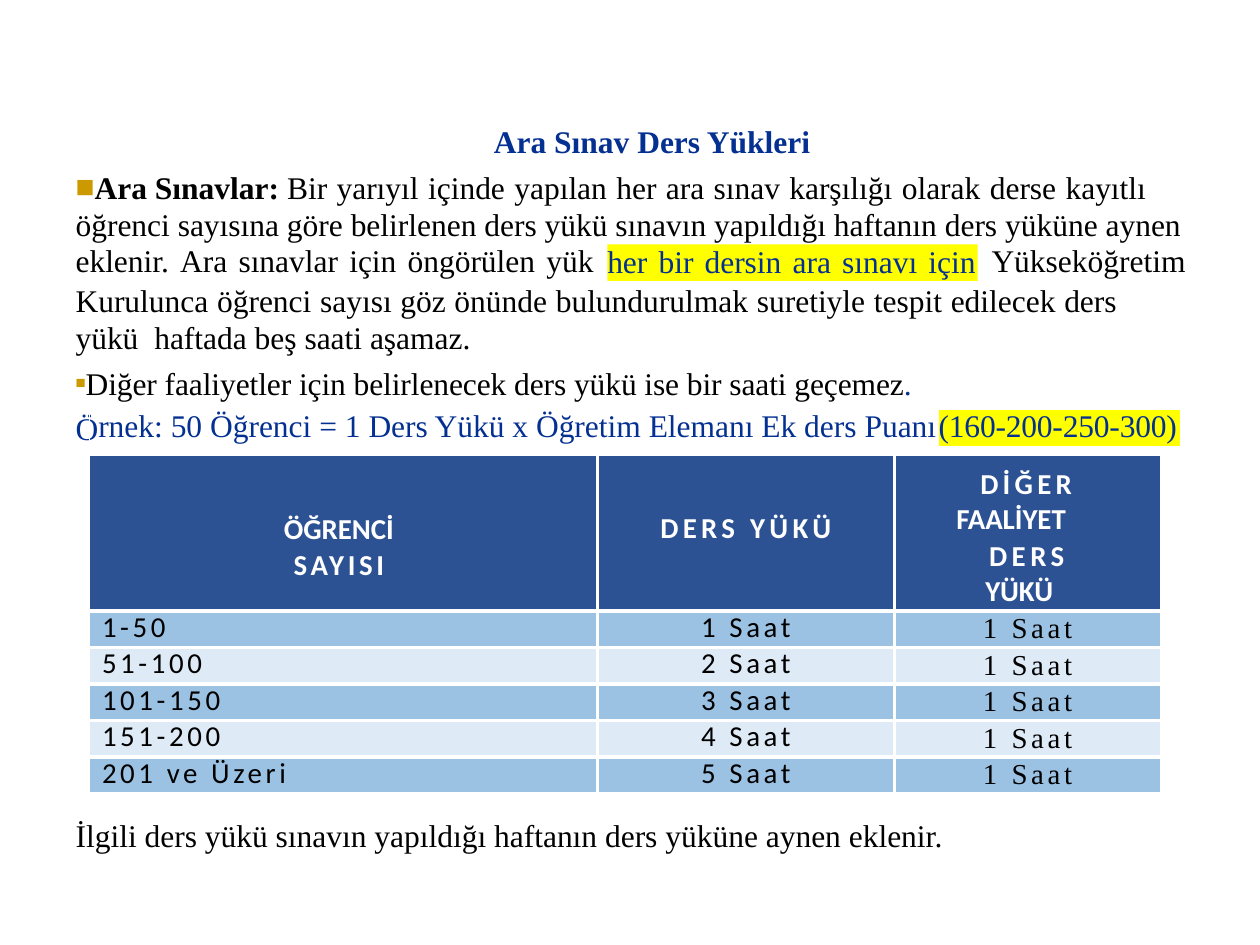
from typing import NamedTuple

from lxml.etree import SubElement
from pptx import Presentation
from pptx.dml.color import RGBColor as Rgb
from pptx.enum.shapes import MSO_SHAPE as Kind
from pptx.enum.text import PP_ALIGN as Align
from pptx.oxml.ns import qn
from pptx.util import Inches, Pt

HUES = {"ink": "000000", "navy": "043092", "gold": "CC9900", "mark": "FFFF00",
        "head": "2D5294", "dark": "9CC2E3", "pale": "DEEAF6", "white": "FFFFFF"}
SERIF, SANS = "Times New Roman", "Calibri"
COLS = (4.03, 2.36, 0.35, 1.77, 0.15)
ROWS = (0.33, 1.27, 0.29, 0.29, 0.29, 0.29, 0.28)


class Box(NamedTuple):
    left: float
    top: float
    width: float
    height: float
    inset: float = 0


class Load(NamedTuple):
    count: str
    hours: str
    other: str = "1 Saat"


LOADS = (Load("1-50", "1 Saat"), Load("51-100", "2 Saat"), Load("101-150", "3 Saat"),
         Load("151-200", "4 Saat"), Load("201 ve Üzeri", "5 Saat"))


def color(name: str) -> Rgb:
    return Rgb.from_string(HUES[name])


def write(par, text: str, size: float = 18, font: str = SERIF, hue: str = "ink",
          bold: bool = False, spc: float = 0, gap: float = 0) -> None:
    """Add text; spc widens every letter, gap widens only the word spaces."""
    parts = text.replace(" ", "\n \n").split("\n") if gap else [text]
    for part in filter(None, parts):
        run = par.add_run()
        run.text = part
        run.font.size, run.font.name, run.font.bold = Pt(size), font, bold
        run.font.color.rgb = color(hue)
        extra = gap if gap and part == " " else spc
        run._r.get_or_add_rPr().set("spc", str(round(extra * 100)))


def bullet(par, scale: int) -> None:
    props = par._p.get_or_add_pPr()
    tint = SubElement(props, qn("a:buClr"))
    SubElement(tint, qn("a:srgbClr"), val=HUES["gold"])
    SubElement(props, qn("a:buSzPct"), val=str(scale * 1000))
    SubElement(props, qn("a:buFont"), typeface=SERIF)
    SubElement(props, qn("a:buChar"), char="■")


def layout(par, left: float = 0, right: float = 0, first: float = 0, line=None,
           before: float = 0, align=Align.LEFT):
    """Set indents in inches, and line and space before in points."""
    props = par._p.get_or_add_pPr()
    for name, size in (("marL", left), ("marR", right), ("indent", first)):
        props.set(name, str(Inches(size)))
    par.alignment = align
    par.space_before = Pt(before)
    if line:
        par.line_spacing = line
    return par


def trim(owner, top: float = 0) -> None:
    """Clear the margins of a text frame or a cell, save the one at the top."""
    owner.margin_left = owner.margin_right = owner.margin_bottom = 0
    owner.margin_top = Inches(top)


def add_box(slide, box: Box):
    frame = slide.shapes.add_textbox(*map(Inches, box[:4])).text_frame
    frame.word_wrap = True
    trim(frame, box.inset)
    return frame


def add_intro(slide) -> None:
    frame = add_box(slide, Box(0.59, 0.91, 8.82, 1.02, 0.06))
    title = layout(frame.paragraphs[0], left=3.33)
    write(title, "Ara Sınav Ders Yükleri", hue="navy", bold=True)
    body = frame.add_paragraph()
    bullet(body, 100)
    layout(body, left=0.01, line=Pt(21.4), before=4.5)
    write(body, "Ara Sınavlar: ", bold=True)
    write(body, "Bir yarıyıl içinde yapılan her ara sınav karşılığı olarak "
          "derse kayıtlı ", gap=0.8)
    write(body, "öğrenci sayısına göre belirlenen ders yükü sınavın yapıldığı "
          "haftanın ders yüküne aynen")


def add_mark(slide) -> None:
    rect = slide.shapes.add_shape(Kind.RECTANGLE, *map(Inches, (4.82, 1.94, 2.94, 0.29)))
    rect.shadow.inherit = False
    rect.fill.solid()
    rect.fill.fore_color.rgb = color("mark")
    rect.line.fill.background()
    frame = rect.text_frame
    frame.word_wrap = True
    trim(frame)
    write(layout(frame.paragraphs[0], line=Pt(19.9)), "her bir dersin ara sınavı için",
          hue="navy", gap=1.8)


def add_rules(slide) -> None:
    for box, text in (
            (Box(0.59, 1.9, 4.2, 0.33, 0.01), "eklenir. Ara sınavlar için öngörülen yük"),
            (Box(7.86, 1.9, 1.56, 0.33, 0.01), "Yükseköğretim")):
        par = add_box(slide, box).paragraphs[0]
        write(layout(par, left=0.01), text, gap=1.8)

    frame = add_box(slide, Box(0.59, 2.2, 8.83, 1.36, 0.03))
    limit = layout(frame.paragraphs[0], left=0.01, right=0.1, line=Pt(21.4))
    write(limit, "Kurulunca öğrenci sayısı göz önünde bulundurulmak suretiyle "
          "tespit edilecek ders ", gap=0.4)
    write(limit, "yükü ", gap=4.5)
    write(limit, "haftada beş saati aşamaz.")
    other = frame.add_paragraph()
    bullet(other, 53)
    layout(other, left=0.01, line=Pt(25.7), before=0.6)
    write(other, "Diğer faaliyetler için belirlenecek ders yükü ise bir saati geçemez",
          spc=-0.05)
    write(other, ".", hue="navy")
    other.add_line_break()
    write(other, "Ö", hue="navy")


def edge(cell, sides: dict[str, float]) -> None:
    """Draw white borders; must run before the cell's fill is set."""
    props = cell._tc.get_or_add_tcPr()
    for side in ("L", "R", "T", "B"):
        if side in sides:
            line = SubElement(props, qn(f"a:ln{side}"), w=str(Pt(sides[side])))
            fill = SubElement(line, qn("a:solidFill"))
            SubElement(fill, qn("a:srgbClr"), val=HUES["white"])


def paint(cell, hue: str) -> None:
    cell.fill.solid()
    cell.fill.fore_color.rgb = color(hue)


def sides_at(row: int, col: int) -> dict[str, float]:
    if row == 0:
        return {"B": 6}
    sides = {"T": 6 if row == 1 else 2.25}
    if row < len(ROWS) - 1:
        sides["B"] = 2.25
    if 0 < col < 4:
        sides["L"] = 2.25
    if col < 2:
        sides["R"] = 2.25
    return sides


def add_grid(slide):
    shape = slide.shapes.add_table(len(ROWS), len(COLS), Inches(0.71), Inches(3.25),
                                   Inches(sum(COLS)), Inches(sum(ROWS)))
    table = shape.table
    table.first_row = table.horz_banding = False
    for col, width in zip(table.columns, COLS):
        col.width = Inches(width)
    for i, height in enumerate(ROWS):
        table.rows[i].height = Inches(height)
        for j in range(len(COLS)):
            cell = table.cell(i, j)
            trim(cell)
            cell.text_frame.paragraphs[0].font.size = Pt(10)
            edge(cell, sides_at(i, j))
            if i == 0 or j == 4:
                cell.fill.background()
            else:
                paint(cell, "head" if i == 1 else "pale" if i % 2 else "dark")
        if i:
            table.cell(i, 2).merge(table.cell(i, 3))
    table.cell(0, 0).merge(table.cell(0, 2))
    table.cell(0, 3).merge(table.cell(0, 4))
    table.cell(1, 4).merge(table.cell(len(ROWS) - 1, 4))
    return table


def fill_head(table) -> None:
    look = dict(size=16.5, font=SANS, hue="white", bold=True)
    count, hours, other = (table.cell(1, j) for j in range(3))
    count.margin_top = hours.margin_top = Inches(0.48)
    other.margin_top = Inches(0.12)
    par = layout(count.text_frame.paragraphs[0], left=1.43, right=1.5, line=1.02,
                 align=Align.CENTER)
    write(par, "ÖĞRENCİ ", **look)
    write(par, "SAYISI", spc=2.1, **look)
    par = layout(hours.text_frame.paragraphs[0], align=Align.CENTER)
    write(par, "DERS YÜKÜ", spc=2.5, **look)
    frame = other.text_frame
    par = layout(frame.paragraphs[0], left=0.49, first=0.19, line=1.02)
    write(par, "DİĞER ", spc=2.5, **look)
    write(par, "FAALİYET", **look)
    par = layout(frame.add_paragraph(), left=0.72, right=0.5, first=0.03,
                 line=Pt(20.2), before=0.5)
    write(par, "DERS ", spc=2.6, **look)
    write(par, "YÜKÜ", **look)


def add_loads(slide) -> None:
    table = add_grid(slide)
    first, second = table.cell(0, 0), table.cell(0, 3)
    paint(second, "mark")
    for cell, left, spc, text in (
            (first, 0.07, 0,
             "rnek: 50 Öğrenci = 1 Ders Yükü x Öğretim Elemanı Ek ders Puanı"),
            (second, 0, -0.1, "(160-200-250-300)")):
        par = layout(cell.text_frame.paragraphs[0], left=left, line=Pt(20.1))
        write(par, text, hue="navy", spc=spc)
    fill_head(table)
    forms = ((0.1, Align.LEFT, SANS), (0, Align.CENTER, SANS), (0.7, Align.LEFT, SERIF))
    for i, load in enumerate(LOADS, 2):
        for j, (text, (left, align, font)) in enumerate(zip(load, forms)):
            par = layout(table.cell(i, j).text_frame.paragraphs[0], left=left,
                         line=Pt(19.5), align=align)
            write(par, text, size=16.5, font=font, spc=2.1)


def main() -> None:
    deck = Presentation()
    deck.slide_width, deck.slide_height = Inches(10), Inches(7.5)
    slide = deck.slides.add_slide(deck.slide_layouts[6])
    add_intro(slide)
    add_mark(slide)
    add_rules(slide)
    add_loads(slide)
    note = add_box(slide, Box(0.59, 6.47, 6.92, 0.33, 0.01)).paragraphs[0]
    write(layout(note, left=0.01),
          "İlgili ders yükü sınavın yapıldığı haftanın ders yüküne aynen eklenir.")
    deck.save("out.pptx")


if __name__ == "__main__":
    main()
